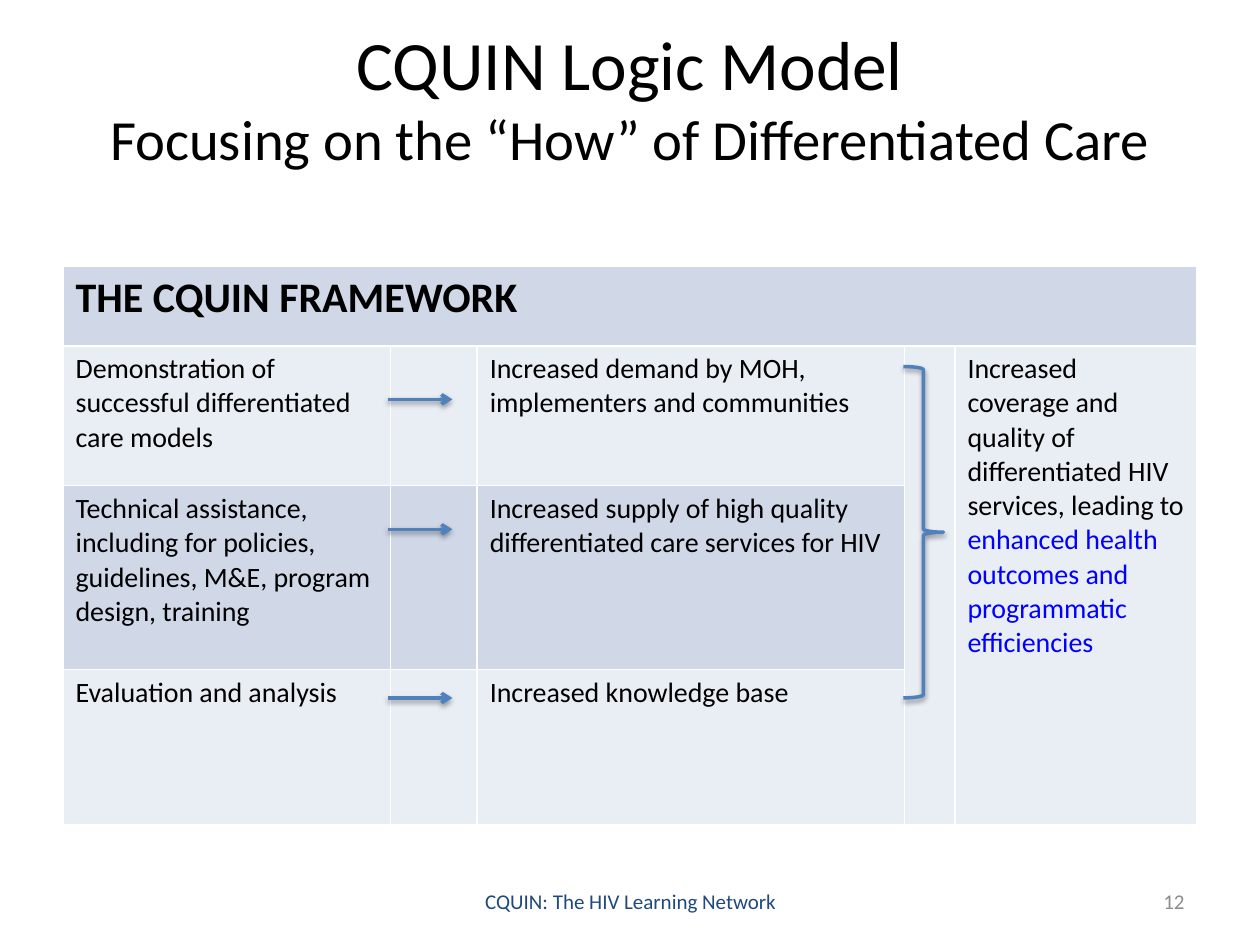
"""Build the CQUIN logic model slide with its framework table, arrows and brace."""
import lxml.etree
import pptx
import pptx.dml.color
import pptx.enum.shapes
import pptx.enum.text
import pptx.oxml
import pptx.oxml.ns
import pptx.util

Cm = pptx.util.Cm
Pt = pptx.util.Pt
RGBColor = pptx.dml.color.RGBColor
Align = pptx.enum.text.PP_ALIGN

BLACK = RGBColor(0x00, 0x00, 0x00)
GRAY = RGBColor(0x8C, 0x8C, 0x8C)
NAVY = RGBColor(0x1F, 0x49, 0x7D)
BLUE = RGBColor(0x00, 0x00, 0xFF)
LINE_BLUE = RGBColor(0x4F, 0x81, 0xBD)
DARK_BAND = RGBColor(0xD0, 0xD8, 0xE8)
LIGHT_BAND = RGBColor(0xE9, 0xED, 0xF4)
NAMESPACE = pptx.oxml.ns.nsdecls("a")
SHADOW = (
    f'<a:effectLst {NAMESPACE}><a:outerShdw blurRad="{Pt(3.1)}" dist="{Pt(1.6)}" '
    'dir="5400000" rotWithShape="0"><a:srgbClr val="000000"><a:alpha val="38000"/>'
    "</a:srgbClr></a:outerShdw></a:effectLst>"
)


def add_run(paragraph, text, size, color=BLACK, bold=False):
    run = paragraph.add_run()
    run.text = text
    font_format = {"name": "Calibri", "size": Pt(size), "bold": bold}
    for attribute, value in font_format.items():
        setattr(run.font, attribute, value)
    run.font.color.rgb = color


def style_line(shape):
    shape.line.color.rgb = LINE_BLUE
    shape.line.width = Pt(2)
    properties = shape._element.spPr
    for effects in properties.findall(pptx.oxml.ns.qn("a:effectLst")):
        properties.remove(effects)
    properties.append(pptx.oxml.parse_xml(SHADOW))


presentation = pptx.Presentation()
presentation.slide_width = Cm(25.4)
presentation.slide_height = Cm(19.05)
slide = presentation.slides.add_slide(presentation.slide_layouts[6])

text_boxes = [
    ((1.27, 0.36, 22.86, 3.18), Align.CENTER,
     [("CQUIN Logic Model", 39.6, BLACK),
      ("Focusing on the “How” of Differentiated Care", 32.4, BLACK)]),
    ((18.21, 17.65, 5.92, 1.02), Align.RIGHT, [("12", 12, GRAY)]),
    ((8.69, 17.65, 8.05, 1.02), Align.CENTER,
     [("CQUIN: The HIV Learning Network", 12, NAVY)]),
]
frame_format = {
    "word_wrap": True,
    "auto_size": pptx.enum.text.MSO_AUTO_SIZE.NONE,
    "vertical_anchor": pptx.enum.text.MSO_ANCHOR.MIDDLE,
}
for box, alignment, lines in text_boxes:
    frame = slide.shapes.add_textbox(*map(Cm, box)).text_frame
    for attribute, value in frame_format.items():
        setattr(frame, attribute, value)
    paragraph = frame.paragraphs[0]
    paragraph.alignment = alignment
    for index, (text, size, color) in enumerate(lines):
        if index:
            paragraph.add_line_break()
        add_run(paragraph, text, size, color)

column_widths = [6.6, 1.75, 8.61, 1.02, 4.88]
row_heights = [1.6, 2.82, 3.71, 3.12]
table = slide.shapes.add_table(
    len(row_heights), len(column_widths), Cm(1.27), Cm(5.37),
    Cm(sum(column_widths)), Cm(sum(row_heights))).table
for column, width in zip(table.columns, column_widths):
    column.width = Cm(width)
for row, height in zip(table.rows, row_heights):
    row.height = Cm(height)

for row_index, row in enumerate(table.rows):
    for column_index, cell in enumerate(row.cells):
        is_dark = row_index == 0 or (row_index == 2 and column_index < 3)
        cell.fill.solid()
        cell.fill.fore_color.rgb = DARK_BAND if is_dark else LIGHT_BAND
        for position, side in enumerate("LRTB"):
            border = pptx.oxml.parse_xml(
                f'<a:ln{side} {NAMESPACE} w="{Pt(1)}"><a:solidFill>'
                f'<a:srgbClr val="FFFFFF"/></a:solidFill></a:ln{side}>')
            cell._tc.get_or_add_tcPr().insert(position, border)

table.cell(0, 0).merge(table.cell(0, 4))
for column_index in (3, 4):
    table.cell(1, column_index).merge(table.cell(3, column_index))

add_run(table.cell(0, 0).text_frame.paragraphs[0], "THE CQUIN FRAMEWORK", 24, bold=True)
framework = [
    ("Demonstration of successful differentiated care models",
     "Increased demand by MOH, implementers and communities"),
    ("Technical assistance, including for policies, guidelines, M&E, program design, training",
     "Increased supply of high quality differentiated care services for HIV"),
    ("Evaluation and analysis", "Increased knowledge base"),
]
for row_index, texts in enumerate(framework, start=1):
    for column_index, text in zip((0, 2), texts):
        add_run(table.cell(row_index, column_index).text_frame.paragraphs[0], text, 16)
outcome = table.cell(1, 4).text_frame.paragraphs[0]
add_run(outcome, "Increased coverage and quality of differentiated HIV services, leading to ", 16)
add_run(outcome, "enhanced health outcomes and programmatic efficiencies", 16, BLUE)

for top in (8.05, 10.67, 14.07):
    arrow = slide.shapes.add_connector(
        pptx.enum.shapes.MSO_CONNECTOR.STRAIGHT, Cm(7.82), Cm(top), Cm(9.12), Cm(top))
    style_line(arrow)
    lxml.etree.SubElement(
        arrow.line._get_or_add_ln(), pptx.oxml.ns.qn("a:tailEnd"), type="arrow")

brace = slide.shapes.add_shape(
    pptx.enum.shapes.MSO_SHAPE.RIGHT_BRACE, Cm(18.21), Cm(7.39), Cm(0.81), Cm(6.68))
brace.adjustments[0] = 0.08
brace.fill.background()
style_line(brace)

presentation.save("out.pptx")
